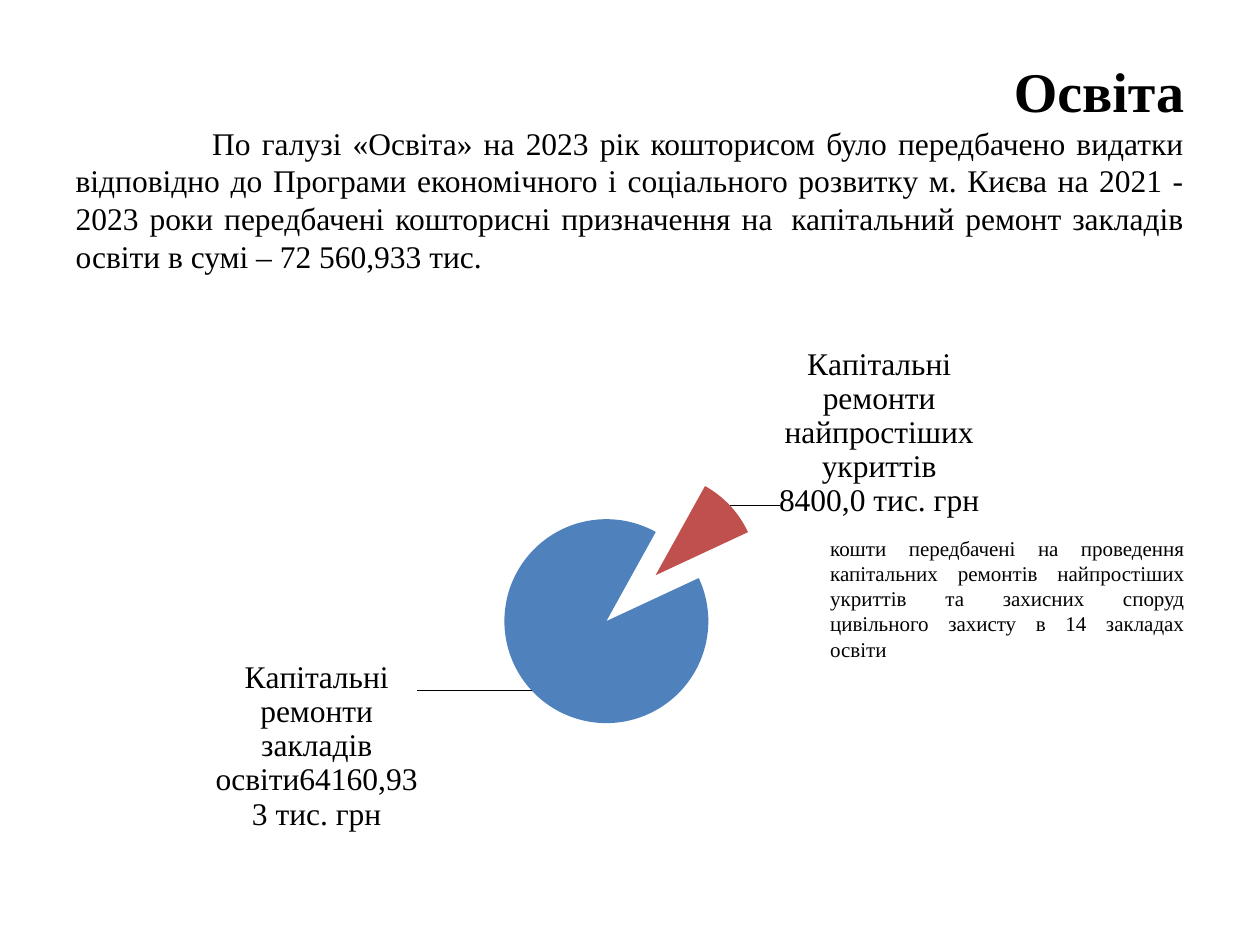
from lxml import etree
from pptx import Presentation
from pptx.chart.data import CategoryChartData
from pptx.dml.color import RGBColor
from pptx.enum.chart import XL_CHART_TYPE, XL_LABEL_POSITION
from pptx.enum.text import MSO_ANCHOR, PP_ALIGN
from pptx.oxml import parse_xml
from pptx.oxml.ns import nsdecls, qn
from pptx.util import Pt

PIE = XL_CHART_TYPE.PIE
OUTSIDE_END = XL_LABEL_POSITION.OUTSIDE_END
MIDDLE = MSO_ANCHOR.MIDDLE
RIGHT, JUSTIFY, CENTER = PP_ALIGN.RIGHT, PP_ALIGN.JUSTIFY, PP_ALIGN.CENTER

SERIF = "Times New Roman"
BLACK = "000000"

HEADING = "Освіта"
SUMMARY = (
    "По галузі «Освіта» на 2023 рік кошторисом було передбачено видатки "
    "відповідно до Програми економічного і соціального розвитку м. Києва на "
    "2021 - 2023 роки передбачені кошторисні призначення на\u00a0 капітальний "
    "ремонт закладів освіти в сумі – 72\u00a0560,933 тис."
)
SHELTER_NOTE = (
    "кошти передбачені на проведення капітальних ремонтів найпростіших укриттів "
    "та захисних споруд цивільного захисту в 14 закладах освіти"
)
# category, share, colour, label, label offset as a fraction of the chart
REPAIRS = [
    ("Капітальні ремонти ", 90, "4F81BD",
     "Капітальні ремонти закладів освіти64160,933 тис. грн", (-0.1, -0.06)),
    ("Ремонти найпростіших укриттів", 10, "C0504D",
     "Капітальні ремонти найпростіших укриттів\n8400,0 тис. грн", (0.04, 0.03)),
]
PLOT_AREA = {"x": 0.376, "y": 0.265, "w": 0.25, "h": 0.467}
FIRST_SLICE_ANGLE = 65
EXPLOSION = 33


def rgb(value):
    return RGBColor.from_string(value)


def style_font(font, size, bold=False, name=SERIF):
    for key, value in {"name": name, "size": Pt(size), "bold": bold}.items():
        setattr(font, key, value)
    font.color.rgb = rgb(BLACK)


def place(part, box):
    for side, length in zip(("left", "top", "width", "height"), box):
        setattr(part, side, Pt(length))


def write(paragraph, text, align, size, bold=False):
    paragraph.alignment = align
    run = paragraph.add_run()
    run.text = text
    style_font(run.font, size, bold)


def manual_layout(values, inner=False):
    layout = parse_xml(f"<c:layout {nsdecls('c')}><c:manualLayout/></c:layout>")
    settings = {"layoutTarget": "inner", "xMode": "edge", "yMode": "edge"} if inner else {}
    for tag, value in {**settings, **values}.items():
        etree.SubElement(layout[0], qn(f"c:{tag}")).set("val", str(value))
    return layout


def add_heading(slide, box):
    title = slide.shapes.title
    place(title, box)
    frame = title.text_frame
    frame.word_wrap = True
    frame.vertical_anchor = MIDDLE
    write(frame.paragraphs[0], HEADING, RIGHT, 32, True)
    summary = frame.add_paragraph()
    write(summary, SUMMARY, JUSTIFY, 18)
    summary._p.get_or_add_pPr().set("indent", str(Pt(78)))


def label_slice(point, text, offset):
    label = point.data_label
    frame = label.text_frame
    frame.text = text
    for paragraph in frame.paragraphs:
        paragraph.alignment = CENTER
        for run in paragraph.runs:
            style_font(run.font, 18)
    label.position = OUTSIDE_END
    element = frame._txBody.getparent().getparent()
    element.find(qn("c:idx")).addnext(manual_layout(dict(zip("xy", offset))))


def add_repairs_pie(slide, box):
    shares = CategoryChartData()
    shares.categories = [repair[0] for repair in REPAIRS]
    shares.add_series("Series 1", [repair[1] for repair in REPAIRS])
    chart = slide.shapes.add_chart(PIE, *map(Pt, box), shares).chart
    chart.has_title = False
    chart.has_legend = False
    style_font(chart.font, 10, name="Calibri")

    plot_area = chart._chartSpace.chart.plotArea
    for layout in plot_area.findall(qn("c:layout")):
        plot_area.remove(layout)
    plot_area.insert(0, manual_layout(PLOT_AREA, inner=True))

    plot = chart.plots[0]
    plot.vary_by_categories = True
    pie = plot._element
    for angle in pie.findall(qn("c:firstSliceAng")):
        pie.remove(angle)
    etree.SubElement(pie, qn("c:firstSliceAng")).set("val", str(FIRST_SLICE_ANGLE))

    series = plot.series[0]
    explosion = parse_xml(f'<c:explosion {nsdecls("c")} val="{EXPLOSION}"/>')
    series._element.find(qn("c:tx")).addnext(explosion)
    for index, (_, _, colour, text, offset) in enumerate(REPAIRS):
        point = series.points[index]
        point.format.fill.solid()
        point.format.fill.fore_color.rgb = rgb(colour)
        label_slice(point, text, offset)


def add_shelter_note(slide, box):
    frame = slide.shapes.add_textbox(*map(Pt, box)).text_frame
    frame.word_wrap = True
    write(frame.paragraphs[0], SHELTER_NOTE, JUSTIFY, 12)


def main():
    deck = Presentation()
    deck.slide_width, deck.slide_height = Pt(720), Pt(540)
    slide = deck.slides.add_slide(deck.slide_layouts.get_by_name("Title Only"))
    add_heading(slide, (36, 21.6, 648, 146))
    add_repairs_pie(slide, (49.7, 176.4, 620.6, 332))
    add_shelter_note(slide, (467.3, 302.4, 216.7, 80))
    deck.save("out.pptx")


if __name__ == "__main__":
    main()
